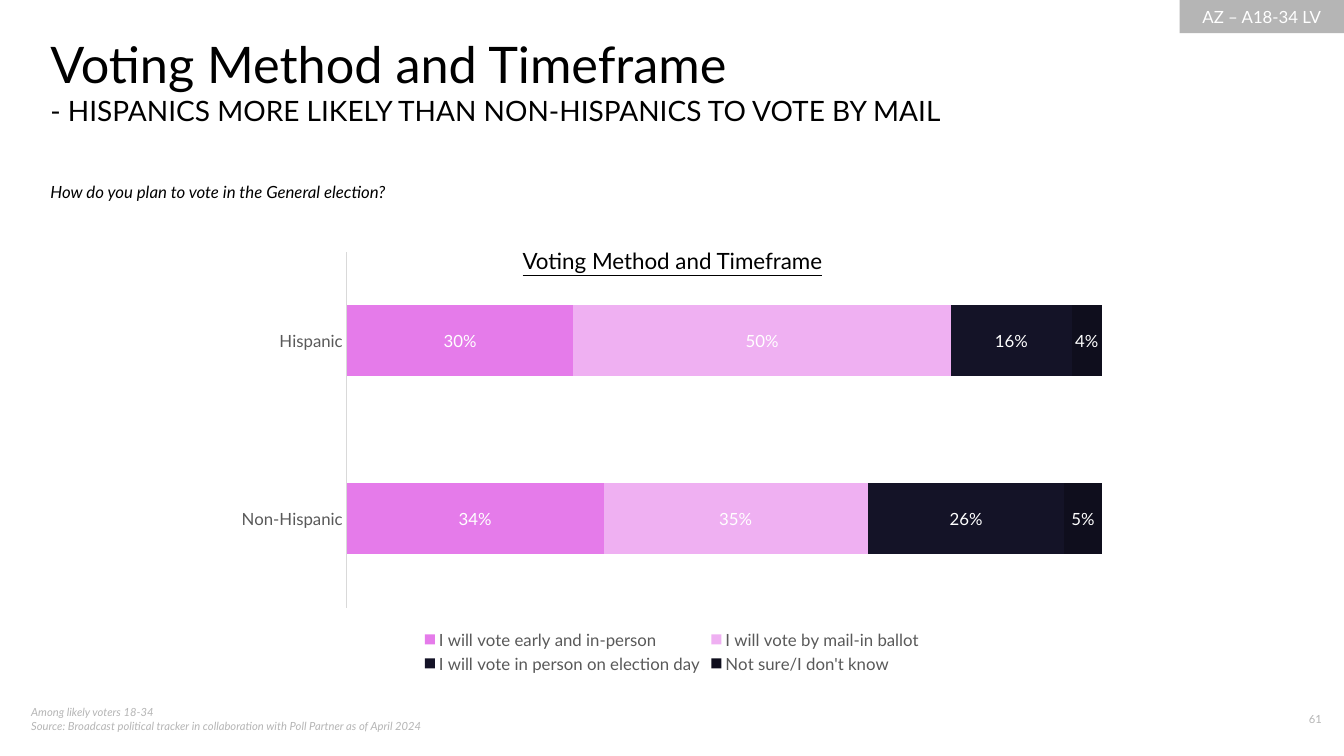
from dataclasses import dataclass

import pptx
import pptx.chart.data
import pptx.dml.color
import pptx.enum.chart
import pptx.enum.shapes
import pptx.enum.text
import pptx.oxml
import pptx.util
from pptx.util import Inches

Align = pptx.enum.text.PP_ALIGN
Anchor = pptx.enum.text.MSO_ANCHOR


@dataclass(frozen=True)
class Theme:
    font: str = "Lato"
    black: str = "000000"
    white: str = "FFFFFF"
    muted: str = "B5B5B5"
    chart_text: str = "595959"
    axis: str = "D9D9D9"
    heading: int = 36
    subheading: int = 20
    chart_title: int = 16
    normal: int = 12
    chart_base: int = 10
    note: int = 8


THEME = Theme()


@dataclass(frozen=True)
class Box:
    left: float
    top: float
    width: float
    height: float

    def lengths(self) -> tuple:
        return tuple(Inches(n) for n in (self.left, self.top, self.width, self.height))


@dataclass(frozen=True)
class Label:
    text: str
    box: Box
    size: int
    color: str
    align: Align = Align.LEFT
    anchor: Anchor = Anchor.TOP
    italic: bool = False
    underline: bool = False
    fill: str = ""


@dataclass(frozen=True)
class Answer:
    name: str
    shares: tuple
    color: str


LABELS = (
    Label("AZ – A18-34 LV", Box(11.7, 0, 1.63, 0.33), THEME.normal, THEME.white,
          Align.CENTER, Anchor.MIDDLE, fill=THEME.muted),
    Label("Among likely voters 18-34\vSource: Broadcast political tracker in collaboration "
          "with Poll Partner as of April 2024", Box(0.21, 6.95, 5.11, 0.4),
          THEME.note, THEME.muted, italic=True),
    Label("61", Box(12.33, 7.02, 0.88, 0.27), THEME.note, THEME.muted, Align.RIGHT),
)
CHART_TITLE = Label("Voting Method and Timeframe", Box(4.2, 2.18, 4.94, 0.81),
                    THEME.chart_title, THEME.black, Align.CENTER, Anchor.MIDDLE,
                    underline=True)
GROUPS = ("Hispanic", "Non-Hispanic")
ANSWERS = (
    Answer("I will vote early and in-person", (0.30, 0.34), "E57BEA"),
    Answer("I will vote by mail-in ballot", (0.50, 0.35), "EFB0F2"),
    Answer("I will vote in person on election day", (0.16, 0.26), "141327"),
    Answer("Not sure/I don't know", (0.04, 0.05), "0F0E1D"),
)
CHART_BOX = Box(2.22, 2.42, 8.89, 4.3)
PLOT_BOX = Box(3.44, 2.5, 7.49, 3.53)


def rgb(color: str) -> pptx.dml.color.RGBColor:
    return pptx.dml.color.RGBColor.from_string(color)


def set_font(font, size: int, color: str, italic: bool = False) -> None:
    font.name = THEME.font
    font.size = pptx.util.Pt(size)
    font.color.rgb = rgb(color)
    font.italic = italic


def add_label(slide, label: Label) -> None:
    if label.fill:
        shape = slide.shapes.add_shape(
            pptx.enum.shapes.MSO_SHAPE.RECTANGLE, *label.box.lengths())
        shape.shadow.inherit = False
        shape.fill.solid()
        shape.fill.fore_color.rgb = rgb(label.fill)
        shape.line.fill.background()
    else:
        shape = slide.shapes.add_textbox(*label.box.lengths())
    frame = shape.text_frame
    frame.word_wrap = True
    frame.vertical_anchor = label.anchor
    frame.text = label.text
    paragraph = frame.paragraphs[0]
    paragraph.alignment = label.align
    set_font(paragraph.font, label.size, label.color, label.italic)
    if label.underline:
        paragraph.font.underline = True


def fill_placeholder(shape, box: Box, lines: tuple, italic: bool = False) -> None:
    """Place the placeholder and write (text, size) lines without bullets or insets."""
    shape.left, shape.top, shape.width, shape.height = box.lengths()
    frame = shape.text_frame
    frame.margin_left = frame.margin_top = frame.margin_right = frame.margin_bottom = 0
    frame.vertical_anchor = Anchor.TOP
    frame.word_wrap = True
    frame.auto_size = pptx.enum.text.MSO_AUTO_SIZE.NONE
    frame.text = "\n".join(text for text, _ in lines)
    for paragraph, (_, size) in zip(frame.paragraphs, lines):
        properties = paragraph._p.get_or_add_pPr()
        properties.set("marL", "0")
        properties.set("indent", "0")
        properties.append(pptx.oxml.parse_xml(
            f'<a:buNone {pptx.oxml.ns.nsdecls("a")}/>'))
        paragraph.alignment = Align.LEFT
        paragraph.space_before = pptx.util.Pt(0)
        set_font(paragraph.font, size, THEME.black, italic)


def set_plot_layout(chart) -> None:
    """Fix the inner plot area as fractions of the chart frame."""
    fractions = {
        "x": (PLOT_BOX.left - CHART_BOX.left) / CHART_BOX.width,
        "y": (PLOT_BOX.top - CHART_BOX.top) / CHART_BOX.height,
        "w": PLOT_BOX.width / CHART_BOX.width,
        "h": PLOT_BOX.height / CHART_BOX.height,
    }
    values = "".join(f'<c:{key} val="{value:.4f}"/>' for key, value in fractions.items())
    layout = pptx.oxml.parse_xml(
        f'<c:layout {pptx.oxml.ns.nsdecls("c")}><c:manualLayout>'
        '<c:layoutTarget val="inner"/><c:xMode val="edge"/><c:yMode val="edge"/>'
        f'{values}</c:manualLayout></c:layout>')
    plot_area = chart._chartSpace.chart.plotArea
    for old_layout in plot_area.findall(pptx.oxml.ns.qn("c:layout")):
        plot_area.remove(old_layout)
    plot_area.insert(0, layout)


def add_vote_chart(slide) -> None:
    data = pptx.chart.data.CategoryChartData(number_format="0%")
    data.categories = GROUPS
    for answer in ANSWERS:
        data.add_series(answer.name, answer.shares)
    chart = slide.shapes.add_chart(
        pptx.enum.chart.XL_CHART_TYPE.BAR_STACKED, *CHART_BOX.lengths(), data).chart
    set_font(chart.font, THEME.chart_base, THEME.black)
    chart.has_title = False
    chart.has_legend = True
    chart.legend.position = pptx.enum.chart.XL_LEGEND_POSITION.BOTTOM
    chart.legend.include_in_layout = False
    set_font(chart.legend.font, THEME.normal, THEME.chart_text)

    category_axis = chart.category_axis
    category_axis.reverse_order = True
    category_axis.major_tick_mark = pptx.enum.chart.XL_TICK_MARK.NONE
    category_axis.format.line.color.rgb = rgb(THEME.axis)
    category_axis.format.line.width = pptx.util.Pt(0.75)
    set_font(category_axis.tick_labels.font, THEME.normal, THEME.chart_text)
    value_axis = chart.value_axis
    value_axis.minimum_scale, value_axis.maximum_scale = 0, 1
    value_axis.has_major_gridlines = False
    value_axis.visible = False

    plot = chart.plots[0]
    plot.gap_width, plot.overlap = 150, 100
    plot.vary_by_categories = False
    for series, answer in zip(plot.series, ANSWERS):
        series.format.fill.solid()
        series.format.fill.fore_color.rgb = rgb(answer.color)
        labels = series.data_labels
        labels.show_value = True
        labels.number_format = "0%"
        labels.number_format_is_linked = False
        labels.position = pptx.enum.chart.XL_LABEL_POSITION.CENTER
        set_font(labels.font, THEME.normal, THEME.white)
    set_plot_layout(chart)


def main() -> None:
    presentation = pptx.Presentation()
    presentation.slide_width, presentation.slide_height = Inches(13.33), Inches(7.5)
    slide = presentation.slides.add_slide(presentation.slide_layouts[1])
    fill_placeholder(slide.shapes.title, Box(0.5, 0.33, 12, 1.4), (
        ("Voting Method and Timeframe", THEME.heading),
        ("- HISPANICS MORE LIKELY THAN NON-HISPANICS TO VOTE BY MAIL", THEME.subheading)))
    fill_placeholder(slide.placeholders[1], Box(0.5, 1.8, 11.01, 0.2),
                     (("How do you plan to vote in the General election?", THEME.normal),),
                     italic=True)
    for label in LABELS:
        add_label(slide, label)
    add_vote_chart(slide)
    add_label(slide, CHART_TITLE)
    presentation.save("out.pptx")


if __name__ == "__main__":
    main()
